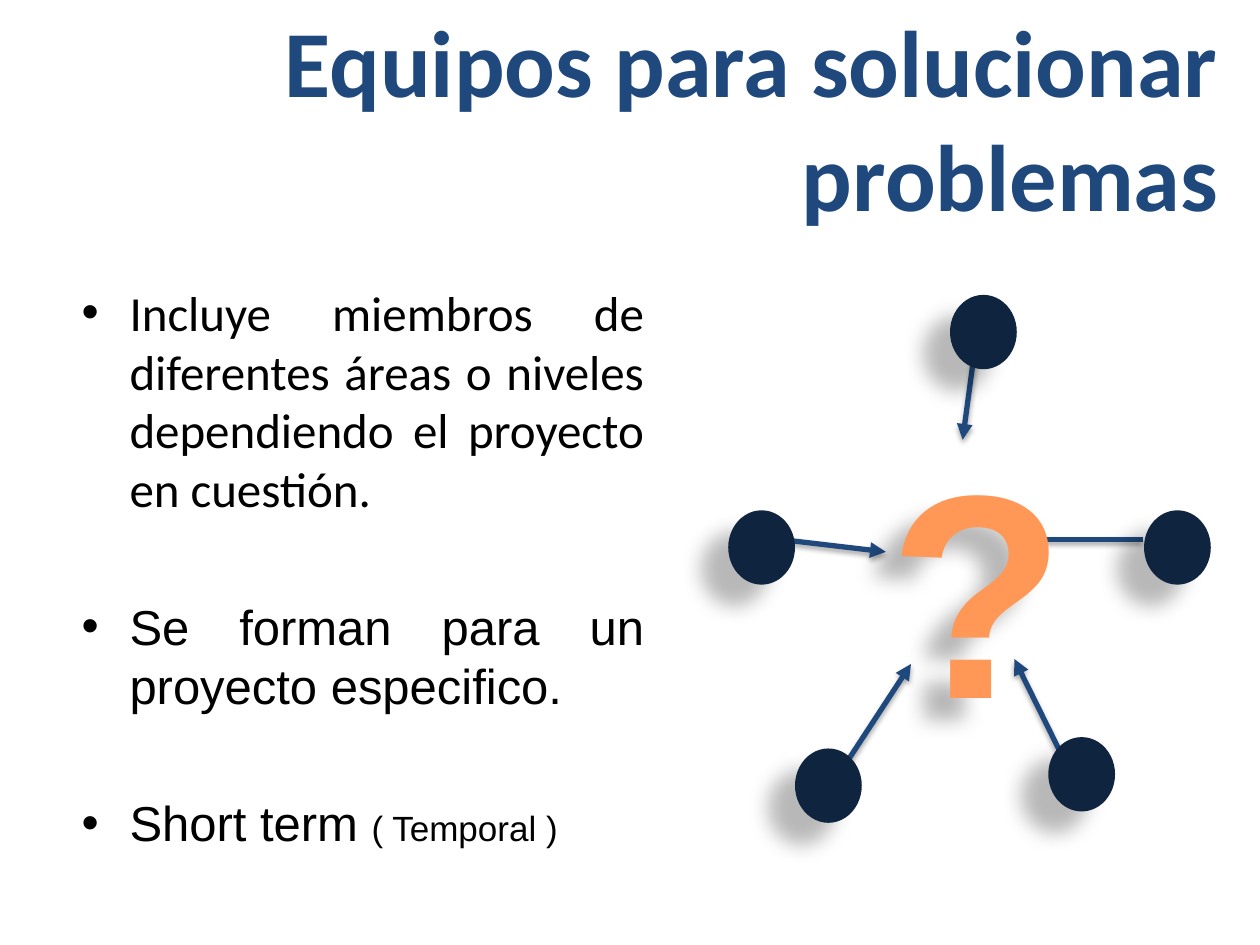
import lxml.etree
import pptx
import pptx.dml.color
import pptx.enum.shapes
import pptx.enum.text
import pptx.oxml.ns
import pptx.util

WIDTH, HEIGHT = 10, 7.5
NAVY, DARK, ORANGE, BLACK = "1F497D", "0F243E", "FF9856", "000000"
ALIGN = pptx.enum.text.PP_ALIGN
ANCHOR = pptx.enum.text.MSO_ANCHOR

TITLE = [[("Equipos para solucionar problemas",
           {"name": "Calibri", "size": 54, "bold": True, "color": NAVY})]]
BODY = [
    [("Incluye miembros de diferentes áreas o niveles dependiendo el proyecto en cuestión.",
      {"name": "Calibri", "size": 28, "color": BLACK})],
    [("Se forman para un proyecto especifico.",
      {"name": "Arial", "size": 28, "color": BLACK})],
    [("Short term ", {"name": "Arial", "size": 28, "color": BLACK}),
     ("( Temporal )", {"name": "Arial", "size": 20, "color": BLACK})],
]
QUESTION = [[("?", {"name": "Arial", "size": 166, "bold": True, "color": ORANGE})]]

MEMBER_SIZE = (0.53, 0.59)
MEMBERS = [
    {"corner": (7.54, 2.34), "arrow": ((7.73, 2.82), (7.64, 3.49))},
    {"corner": (9.08, 4.05), "arrow": ((9.07, 4.28), (8.04, 4.28))},
    {"corner": (5.78, 4.05), "arrow": ((6.18, 4.28), (7.03, 4.38))},
    {"corner": (8.32, 5.85), "arrow": ((8.45, 6.04), (8.05, 5.23))},
    {"corner": (6.31, 5.94), "arrow": ((6.7, 6.08), (7.23, 5.27))},
]
LINE_SHADOW = {"opacity": 35, "blur": 3.1, "distance": 1.8, "angle": 90}
MEMBER_SHADOW = {"opacity": 28, "blur": 11.8, "distance": 19.7, "angle": 141}


def color(value):
    return pptx.dml.color.RGBColor.from_string(value)


def inches(*values):
    return [pptx.util.Inches(value) for value in values]


def add_node(parent, tag, **attributes):
    node = lxml.etree.SubElement(parent, pptx.oxml.ns.qn("a:" + tag))
    for key, value in attributes.items():
        node.set(key, str(value))
    return node


def add_shadow(shape, opacity, blur, distance, angle):
    effects = add_node(shape.element.spPr, "effectLst")
    shadow = add_node(effects, "outerShdw", blurRad=int(pptx.util.Pt(blur)),
                      dist=int(pptx.util.Pt(distance)), dir=angle * 60000,
                      algn="ctr", rotWithShape=0)
    add_node(add_node(shadow, "srgbClr", val=BLACK), "alpha", val=opacity * 1000)


def add_text(page, place, paragraphs, align, anchor=ANCHOR.TOP, gap=0, indent=0):
    box = page.shapes.add_textbox(*inches(*place))
    frame = box.text_frame
    frame.word_wrap = True
    frame.vertical_anchor = anchor
    for index, runs in enumerate(paragraphs):
        para = frame.add_paragraph() if index else frame.paragraphs[0]
        para.alignment = align
        if index:
            para.space_before = pptx.util.Pt(gap)
        if indent:
            properties = para._p.get_or_add_pPr()
            offset = int(pptx.util.Inches(indent))
            properties.set("marL", str(offset))
            properties.set("indent", str(-offset))
            add_node(properties, "buFont", typeface="Arial")
            add_node(properties, "buChar", char="•")
        for text, formats in runs:
            span = para.add_run()
            span.text = text
            for key, value in formats.items():
                if key == "color":
                    span.font.color.rgb = color(value)
                else:
                    setattr(span.font, key, pptx.util.Pt(value) if key == "size" else value)
    return box


def add_arrow(page, start, end):
    arrow = page.shapes.add_connector(
        pptx.enum.shapes.MSO_CONNECTOR.STRAIGHT, *inches(*start, *end))
    arrow.line.color.rgb = color(NAVY)
    arrow.line.width = pptx.util.Pt(3)
    add_node(arrow.line._get_or_add_ln(), "tailEnd", type="triangle")
    add_shadow(arrow, **LINE_SHADOW)


def add_member(page, corner):
    member = page.shapes.add_shape(
        pptx.enum.shapes.MSO_SHAPE.OVAL, *inches(*corner, *MEMBER_SIZE))
    member.fill.solid()
    member.fill.fore_color.rgb = color(DARK)
    member.line.fill.background()
    add_shadow(member, **MEMBER_SHADOW)


def main():
    """Build the slide about problem-solving teams."""
    deck = pptx.Presentation()
    deck.slide_width, deck.slide_height = inches(WIDTH, HEIGHT)
    page = deck.slides.add_slide(deck.slide_layouts[6])
    add_text(page, (0.77, 0.3, 9, 1.25), TITLE, ALIGN.RIGHT, ANCHOR.MIDDLE)
    for member in MEMBERS:
        add_arrow(page, *member["arrow"])
    for member in MEMBERS:
        add_member(page, member["corner"])
    question = add_text(page, (6.95, 3.19, 1.03, 2.67), QUESTION, ALIGN.LEFT)
    add_shadow(question, **MEMBER_SHADOW)
    add_text(page, (0.55, 2.19, 4.66, 4.42), BODY, ALIGN.JUSTIFY, gap=45, indent=0.38)
    deck.save("out.pptx")


if __name__ == "__main__":
    main()
